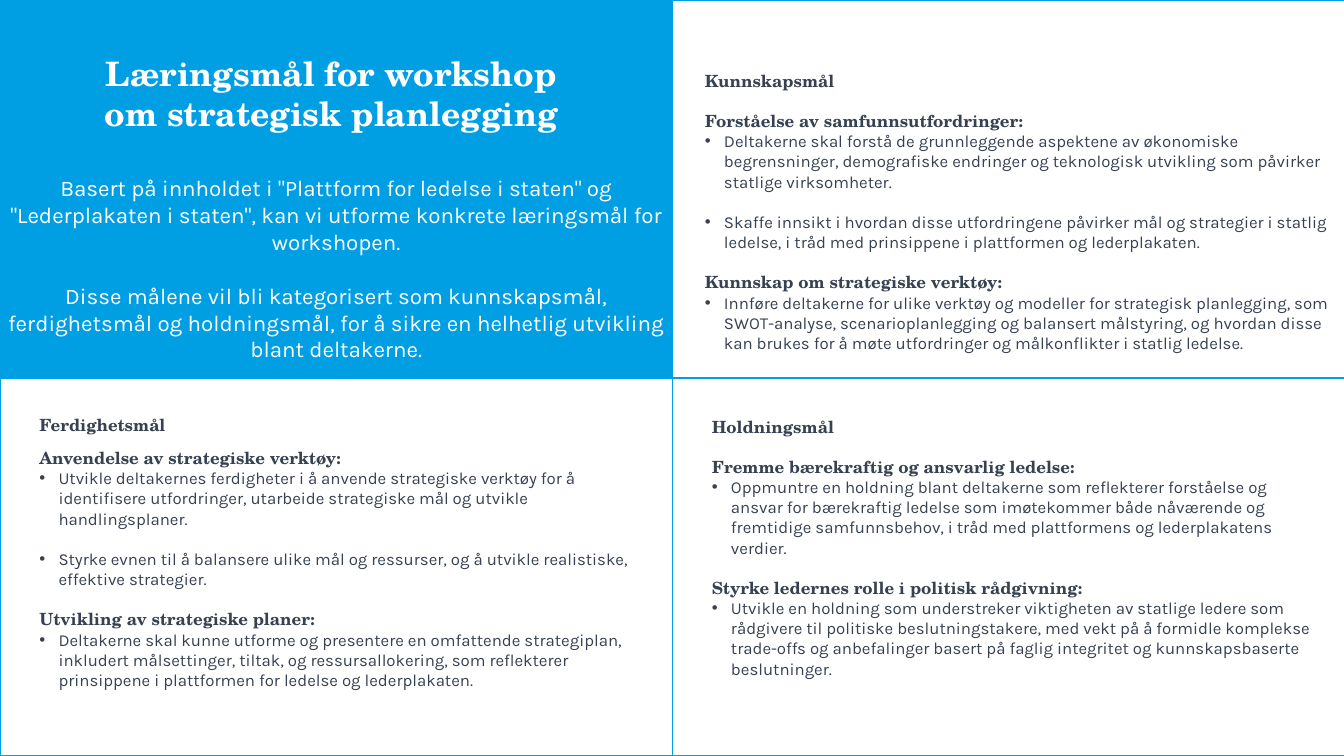
from lxml.etree import SubElement
from pptx import Presentation
from pptx.dml.color import RGBColor
from pptx.enum.shapes import MSO_SHAPE
from pptx.enum.text import MSO_ANCHOR, MSO_AUTO_SIZE, PP_ALIGN
from pptx.oxml.ns import qn
from pptx.util import Inches, Pt

BLUE = RGBColor(0x00, 0x9F, 0xE3)
WHITE = RGBColor(0xFF, 0xFF, 0xFF)
SLATE = RGBColor(0x37, 0x41, 0x51)
SERIF, SANS = "TeX Gyre Schola", "Karla"
PANEL_WIDTH, PANEL_HEIGHT = 6.67, 3.75
INDENT = 0.19
LINE_GAP = 14.4

TITLE = ["Læringsmål for workshop", "om strategisk planlegging"]
INTRO = [
    'Basert på innholdet i "Plattform for ledelse i staten" og "Lederplakaten i staten", '
    "kan vi utforme konkrete læringsmål for workshopen.",
    "Disse målene vil bli kategorisert som kunnskapsmål, ferdighetsmål og holdningsmål, "
    "for å sikre en helhetlig utvikling blant deltakerne.",
]
GOALS = [
    {
        "box": (6.99, 0.57, 6.24, 3.06), "inset": 0.13, "title_gap": LINE_GAP,
        "title": "Kunnskapsmål",
        "sections": [
            ("Forståelse av samfunnsutfordringer:", [
                "Deltakerne skal forstå de grunnleggende aspektene av økonomiske begrensninger, "
                "demografiske endringer og teknologisk utvikling som påvirker statlige virksomheter.",
                "Skaffe innsikt i hvordan disse utfordringene påvirker mål og strategier i statlig "
                "ledelse, i tråd med prinsippene i plattformen og lederplakaten."]),
            ("Kunnskap om strategiske verktøy:", [
                "Innføre deltakerne for ulike verktøy og modeller for strategisk planlegging, som "
                "SWOT-analyse, scenarioplanlegging og balansert målstyring, og hvordan disse kan "
                "brukes for å møte utfordringer og målkonflikter i statlig ledelse."]),
        ],
    },
    {
        "box": (0.39, 3.98, 5.88, 3.3), "inset": 0.13, "title_gap": 9.6,
        "title": "Ferdighetsmål",
        "sections": [
            ("Anvendelse av strategiske verktøy:", [
                "Utvikle deltakernes ferdigheter i å anvende strategiske verktøy for å identifisere "
                "utfordringer, utarbeide strategiske mål og utvikle handlingsplaner.",
                "Styrke evnen til å balansere ulike mål og ressurser, og å utvikle realistiske, "
                "effektive strategier."]),
            ("Utvikling av strategiske planer:", [
                "Deltakerne skal kunne utforme og presentere en omfattende strategiplan, inkludert "
                "målsettinger, tiltak, og ressursallokering, som reflekterer prinsippene i "
                "plattformen for ledelse og lederplakaten."]),
        ],
    },
    {
        "box": (7.06, 4.09, 5.96, 2.86), "inset": 0.04, "title_gap": LINE_GAP,
        "title": "Holdningsmål",
        "sections": [
            ("Fremme bærekraftig og ansvarlig ledelse:", [
                "Oppmuntre en holdning blant deltakerne som reflekterer forståelse og ansvar for "
                "bærekraftig ledelse som imøtekommer både nåværende og fremtidige samfunnsbehov, "
                "i tråd med plattformens og lederplakatens verdier."]),
            ("Styrke ledernes rolle i politisk rådgivning:", [
                "Utvikle en holdning som understreker viktigheten av statlige ledere som rådgivere "
                "til politiske beslutningstakere, med vekt på å formidle komplekse trade-offs og "
                "anbefalinger basert på faglig integritet og kunnskapsbaserte beslutninger."]),
        ],
    },
]


def add_panel(slide, column, row):
    panel = slide.shapes.add_shape(
        MSO_SHAPE.RECTANGLE, Inches(column * PANEL_WIDTH), Inches(row * PANEL_HEIGHT),
        Inches(PANEL_WIDTH), Inches(PANEL_HEIGHT))
    panel.shadow.inherit = False
    panel.fill.solid()
    if column == row == 0:
        panel.fill.fore_color.rgb = BLUE
        panel.line.fill.background()
    else:
        panel.fill.fore_color.rgb = WHITE
        panel.line.color.rgb = BLUE
        panel.line.width = Pt(1)


def place(placeholder, box, insets):
    placeholder.left, placeholder.top, placeholder.width, placeholder.height = map(Inches, box)
    frame = placeholder.text_frame
    frame.word_wrap = True
    frame.auto_size = MSO_AUTO_SIZE.NONE
    frame.vertical_anchor = MSO_ANCHOR.TOP
    frame.margin_left, frame.margin_top, frame.margin_right, frame.margin_bottom = map(Inches, insets)
    return frame


def write(frame, lines, color, align):
    for index, (text, font_name, size, bold, gap, bulleted) in enumerate(lines):
        paragraph = frame.paragraphs[0] if index == 0 else frame.add_paragraph()
        paragraph.text = text
        paragraph.alignment = align
        paragraph.line_spacing = 1.0
        paragraph.space_before = Pt(gap)
        paragraph.space_after = Pt(0)
        properties = paragraph._p.get_or_add_pPr()
        indent = Inches(INDENT) if bulleted else 0
        properties.set("marL", str(indent))
        properties.set("indent", str(-indent))
        if bulleted:
            SubElement(properties, qn("a:buChar")).set("char", "•")
        else:
            SubElement(properties, qn("a:buNone"))
        paragraph.font.name = font_name
        paragraph.font.size = Pt(size)
        paragraph.font.bold = bold
        paragraph.font.color.rgb = color


def goal_lines(goal):
    lines = [(goal["title"], SERIF, 12, True, 0, False)]
    for section_index, (heading, bullets) in enumerate(goal["sections"]):
        gap = LINE_GAP if section_index else goal["title_gap"]
        lines.append((heading, SERIF, 12, True, gap, False))
        for bullet_index, bullet in enumerate(bullets):
            lines.append((bullet, SANS, 12, False, LINE_GAP if bullet_index else 0, True))
    return lines


def main():
    presentation = Presentation()
    presentation.slide_width, presentation.slide_height = Inches(13.33), Inches(7.5)
    slide = presentation.slides.add_slide(presentation.slide_layouts.get_by_name("Comparison"))
    title, intro, *goal_boxes = list(slide.placeholders)

    for column, row in [(0, 0), (0, 1), (1, 1), (1, 0)]:
        add_panel(slide, column, row)
    for placeholder in [title, intro, *goal_boxes]:
        slide.shapes.element.append(placeholder.element)

    frame = place(title, (0, 0.47, PANEL_WIDTH, 0.95), (0.1, 0.05, 0.2, 0.05))
    write(frame, [(text, SERIF, 24, True, 0, False) for text in TITLE], WHITE, PP_ALIGN.CENTER)

    frame = place(intro, (0, 1.68, PANEL_WIDTH, 1.95), (0.08, 0.05, 0.08, 0.05))
    write(frame, [(text, SANS, 16, False, 19.2 if index else 0, False)
                  for index, text in enumerate(INTRO)], WHITE, PP_ALIGN.CENTER)

    for placeholder, goal in zip(goal_boxes, GOALS):
        frame = place(placeholder, goal["box"], (0, goal["inset"], 0, 0))
        write(frame, goal_lines(goal), SLATE, PP_ALIGN.LEFT)

    presentation.save("out.pptx")


if __name__ == "__main__":
    main()
